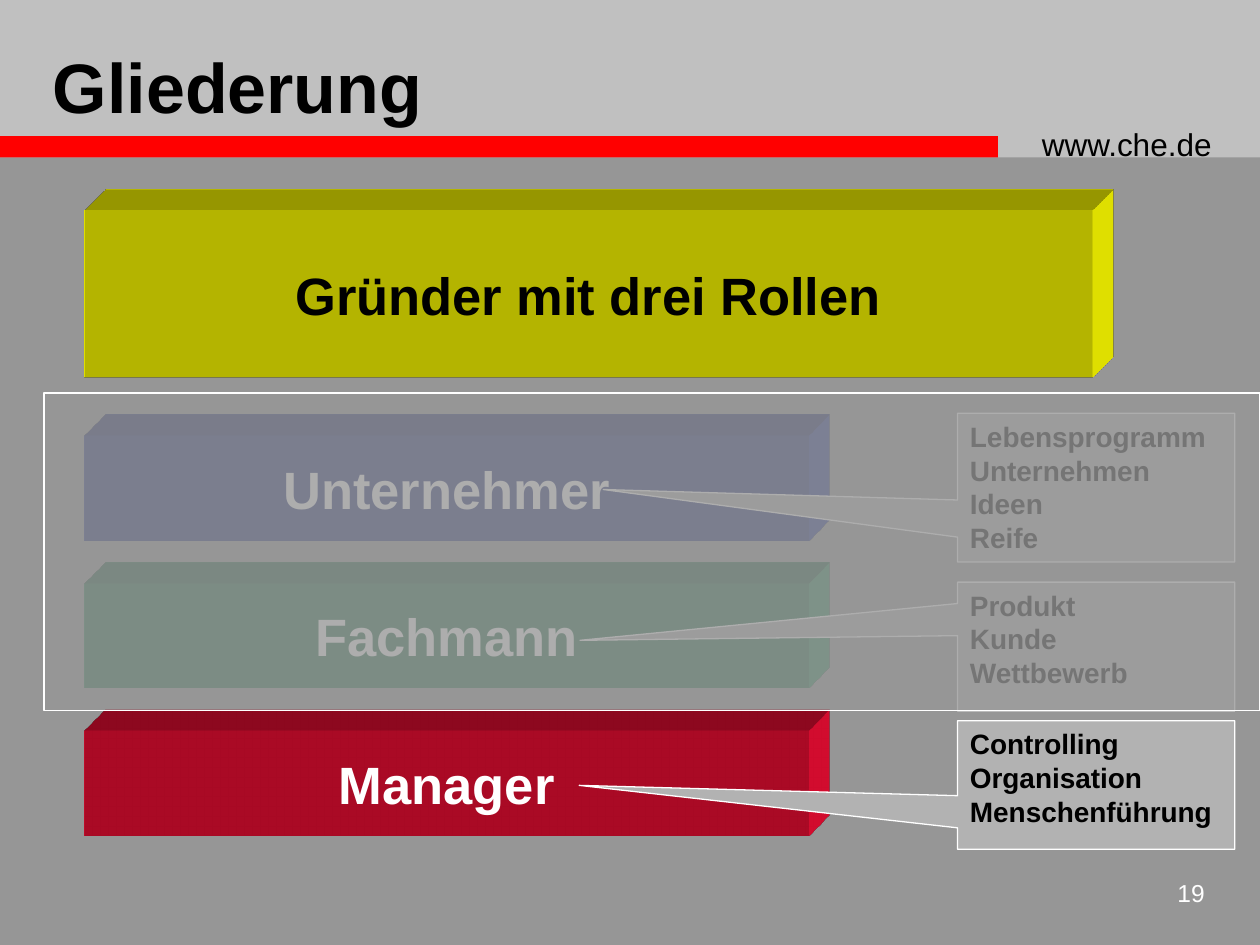
from lxml import etree
from pptx import Presentation
from pptx.dml.color import RGBColor
from pptx.enum.shapes import MSO_SHAPE
from pptx.enum.text import MSO_ANCHOR, PP_ALIGN
from pptx.oxml import parse_xml
from pptx.oxml.ns import nsdecls, qn
from pptx.util import Inches, Pt

RECTANGLE = MSO_SHAPE.RECTANGLE
CALLOUT = MSO_SHAPE.RECTANGULAR_CALLOUT
TOP, MIDDLE = MSO_ANCHOR.TOP, MSO_ANCHOR.MIDDLE
LEFT, CENTER, RIGHT = PP_ALIGN.LEFT, PP_ALIGN.CENTER, PP_ALIGN.RIGHT

COLORS = {
    "background": "969696", "header": "C0C0C0", "stripe": "FF0000",
    "founder": "FFFF00", "entrepreneur": "293BA5", "expert": "339966",
    "manager": "F00E34", "callout": "B2B2B2", "white": "FFFFFF", "black": "000000",
}
HEADING = {"name": "Arial", "size": Pt(40), "bold": True}
BLOCK_LABEL = {"name": "Arial", "size": Pt(30), "bold": True}
CALLOUT_TEXT = {"name": "Arial", "size": Pt(16), "bold": True}
ADDRESS = {"name": "Arial", "size": Pt(18), "bold": False}
PAGE_NUMBER = {"name": "Arial", "size": Pt(14), "bold": False}

BLOCK_LEFT, ROLE_TOP, ROLE_STEP = 0.67, 3.46, 1.17
ROLES = [("Unternehmer", "entrepreneur"), ("Fachmann", "expert"), ("Manager", "manager")]
# Top, height, pointer offsets and lines, from back to front
CALLOUTS = [
    (4.62, 1.02, (-1.862, -0.047), ["Produkt", "Kunde", "Wettbewerb"]),
    (3.28, 1.18, (-1.778, 0.013), ["Lebensprogramm", "Unternehmen", "Ideen", "Reife"]),
    (5.72, 1.02, (-1.865, 0.003), ["Controlling", "Organisation", "Menschenführung"]),
]


def rgb(color):
    return RGBColor.from_string(COLORS[color])


def write(shape, lines, style, color="black", align=LEFT, anchor=TOP, wrap=True):
    frame = shape.text_frame
    frame.word_wrap = wrap
    frame.vertical_anchor = anchor
    for index, line in enumerate(lines):
        para = frame.add_paragraph() if index else frame.paragraphs[0]
        para.alignment = align
        span = para.add_run()
        span.text = line
        for name, value in style.items():
            setattr(span.font, name, value)
        span.font.color.rgb = rgb(color)


def add_text(page, place, text, style, **options):
    box = page.shapes.add_textbox(*map(Inches, place))
    write(box, [text], style, **options)


def add_panel(page, place, fill, outlined=False, kind=RECTANGLE):
    panel = page.shapes.add_shape(kind, *map(Inches, place))
    panel.shadow.inherit = False
    panel.fill.solid()
    panel.fill.fore_color.rgb = rgb(fill)
    if outlined:
        panel.line.color.rgb = rgb("white")
        panel.line.width = Pt(0.75)
    else:
        panel.line.fill.background()
    return panel


def extrude(shape, color):
    """Give the shape depth towards the top right."""
    scene = (
        f'<a:scene3d {nsdecls("a")}><a:camera prst="legacyObliqueTopRight"/>'
        '<a:lightRig rig="legacyFlat3" dir="b"/></a:scene3d>'
    )
    solid = (
        f'<a:sp3d {nsdecls("a")} extrusionH="430200" prstMaterial="legacyMatte">'
        '<a:bevelT w="13500" h="13500" prst="angle"/>'
        '<a:bevelB w="13500" h="13500" prst="angle"/>'
        f'<a:extrusionClr><a:srgbClr val="{COLORS[color]}"/></a:extrusionClr></a:sp3d>'
    )
    for xml in (scene, solid):
        shape.element.spPr.append(parse_xml(xml))


def add_block(page, place, label, fill, color="white"):
    block = add_panel(page, place, fill)
    extrude(block, fill)
    write(block, [label], BLOCK_LABEL, color, CENTER, MIDDLE, wrap=False)


def add_callout(page, top, height, pointer, lines):
    callout = add_panel(page, (7.6, top, 2.2, height), "callout", True, CALLOUT)
    callout.adjustments[0], callout.adjustments[1] = pointer
    write(callout, lines, CALLOUT_TEXT)


def add_veil(page, place, opacity):
    veil = add_panel(page, place, "background", outlined=True)
    color = veil.element.spPr.find(qn("a:solidFill"))[0]
    etree.SubElement(color, qn("a:alpha"), val=str(opacity * 1000))


def place_title(page, place, text):
    title = page.shapes.title
    title.left, title.top, title.width, title.height = map(Inches, place)
    write(title, [text], HEADING, anchor=MIDDLE)
    title.element.getparent().append(title.element)  # in front of the header


def main():
    deck = Presentation()
    deck.slide_width, deck.slide_height = Inches(10), Inches(7.5)
    page = deck.slides.add_slide(deck.slide_layouts[5])
    page.background.fill.solid()
    page.background.fill.fore_color.rgb = rgb("background")

    add_panel(page, (0, 0, 10, 1.25), "header")
    add_panel(page, (0, 1.08, 7.92, 0.17), "stripe")
    add_text(page, (8.17, 0.94, 1.75, 0.4), "www.che.de", ADDRESS)
    add_text(page, (9.08, 6.92, 0.58, 0.42), "19", PAGE_NUMBER, color="white", align=RIGHT)

    add_block(page, (BLOCK_LEFT, 1.67, 8, 1.33), "Gründer mit drei Rollen", "founder", "black")
    for index, (label, fill) in enumerate(ROLES):
        add_block(page, (BLOCK_LEFT, ROLE_TOP + index * ROLE_STEP, 5.75, 0.83), label, fill)
    for callout in CALLOUTS:
        add_callout(page, *callout)

    place_title(page, (0.32, 0.3, 6.1, 0.75), "Gliederung")
    add_veil(page, (0.35, 3.12, 9.65, 2.52), opacity=78)
    deck.save("out.pptx")


if __name__ == "__main__":
    main()
